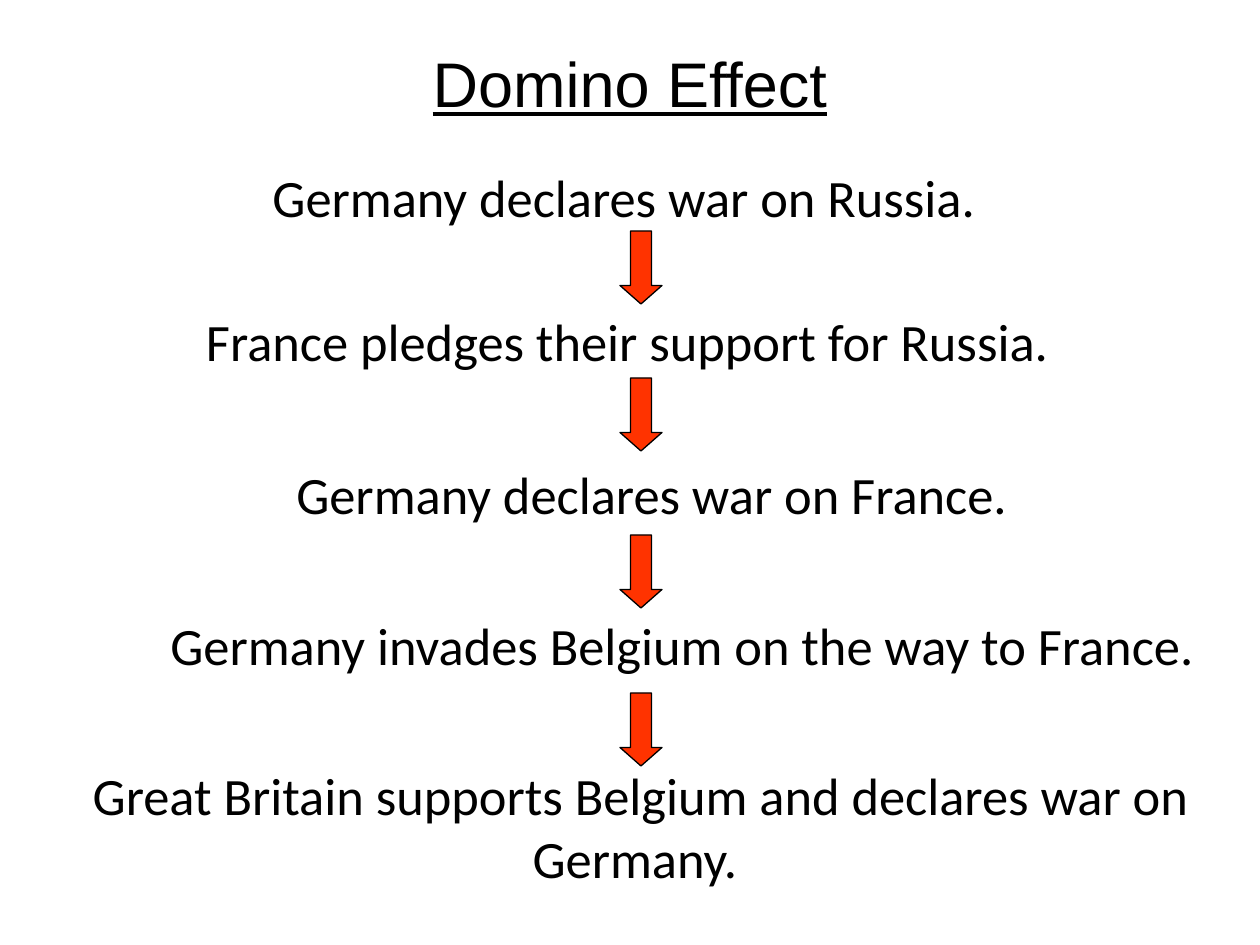
from pptx import Presentation
from pptx.dml.color import RGBColor
from pptx.enum.shapes import MSO_SHAPE as Shape
from pptx.enum.text import MSO_ANCHOR as Anchor, PP_ALIGN as Align
from pptx.util import Emu, Pt

PX_PER_INCH = 126
COLORS = {"text": "000000", "arrow": "FF3300", "outline": "000000", "background": "FFFFFF"}

# text, (left, top, width, height), alignment, anchor, wrap
EVENTS = [
    ("Germany declares war on Russia. ", (63, 159, 1134, 84), Align.CENTER, Anchor.TOP, True),
    ("France pledges their support for Russia. ", (188, 302, 879, 77), Align.CENTER, Anchor.MIDDLE, False),
    ("Germany declares war on France.", (284, 455, 755, 77), Align.LEFT, Anchor.MIDDLE, False),
    ("Germany invades Belgium on the way to France.", (158, 606, 1065, 77), Align.LEFT, Anchor.MIDDLE, False),
    ("Great Britain supports Belgium and declares war on Germany. ", (53, 756, 1176, 140),
     Align.CENTER, Anchor.MIDDLE, True),
]
ARROW_TOPS = [231, 378, 535, 693]


def px(length):
    return Emu(round(length * 914400 / PX_PER_INCH))


def color(name):
    return RGBColor.from_string(COLORS[name])


def write_text(shape, text, font_name, size, align, anchor, wrap=True):
    frame = shape.text_frame
    frame.word_wrap = wrap
    frame.vertical_anchor = anchor
    paragraph = frame.paragraphs[0]
    paragraph.text = text
    paragraph.alignment = align
    font = paragraph.font
    font.name, font.size = font_name, Pt(size)
    font.color.rgb = color("text")
    return font


def set_title(slide, text):
    title = slide.shapes.title
    title.left, title.top, title.width, title.height = map(px, (63, 38, 1134, 88))
    font = write_text(title, text, "Arial", 36, Align.CENTER, Anchor.MIDDLE)
    font.underline = True


def add_event(slide, text, box, align, anchor, wrap):
    shape = slide.shapes.add_textbox(*map(px, box))
    write_text(shape, text, "Calibri", 30, align, anchor, wrap)


def add_down_arrow(slide, top):
    arrow = slide.shapes.add_shape(Shape.DOWN_ARROW, *map(px, (620, top, 42, 73)))
    arrow.adjustments[0] = 0.5
    arrow.adjustments[1] = 0.44
    arrow.shadow.inherit = False
    arrow.fill.solid()
    arrow.fill.fore_color.rgb = color("arrow")
    arrow.line.color.rgb = color("outline")
    arrow.line.width = Pt(0.75)


def main():
    presentation = Presentation()
    presentation.slide_width, presentation.slide_height = px(1260), px(945)
    slide = presentation.slides.add_slide(presentation.slide_layouts[5])
    slide.background.fill.solid()
    slide.background.fill.fore_color.rgb = color("background")
    set_title(slide, "Domino Effect")
    for event in EVENTS:
        add_event(slide, *event)
    for top in ARROW_TOPS:
        add_down_arrow(slide, top)
    presentation.save("out.pptx")


if __name__ == "__main__":
    main()
